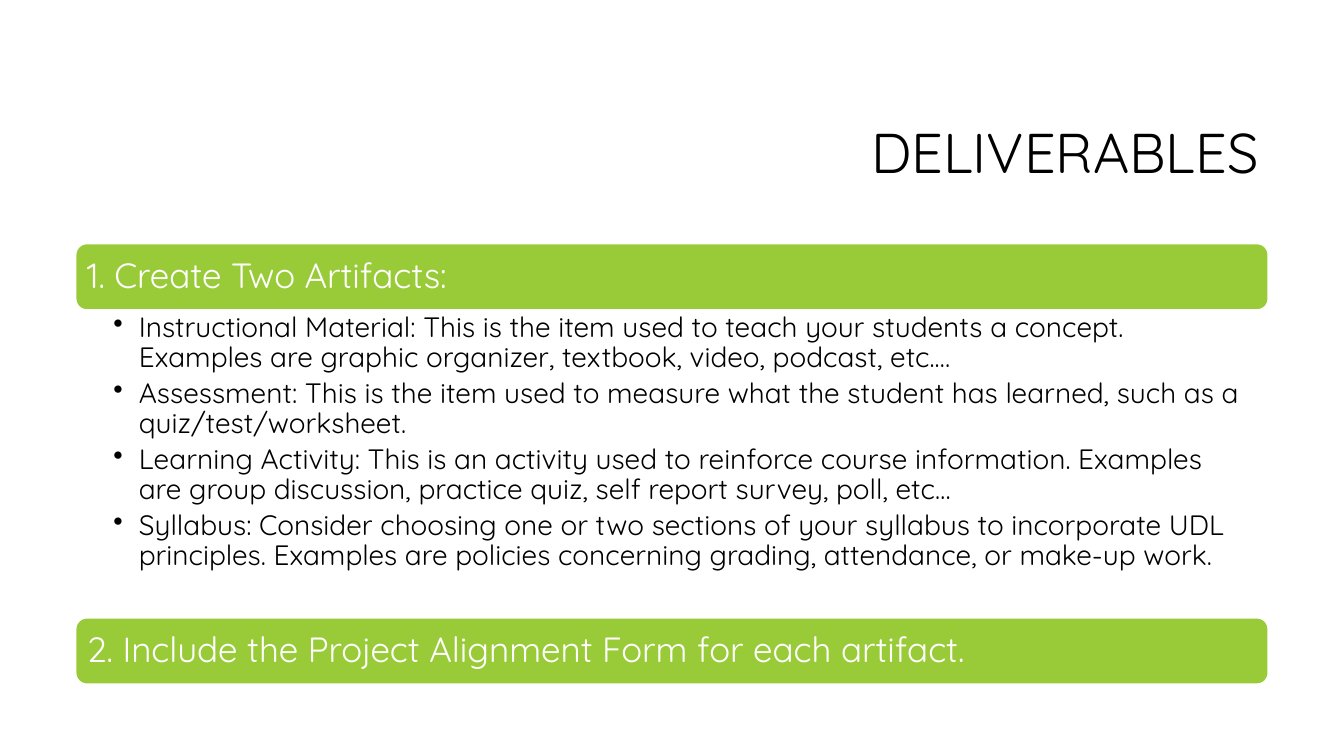
from pptx import Presentation
from pptx.dml.color import RGBColor
from pptx.enum.shapes import MSO_SHAPE
from pptx.enum.text import MSO_ANCHOR, MSO_AUTO_SIZE, PP_ALIGN
from pptx.oxml.ns import qn
from pptx.util import Cm, Pt
from lxml import etree

ROUNDED = MSO_SHAPE.ROUNDED_RECTANGLE
MIDDLE, TOP = MSO_ANCHOR.MIDDLE, MSO_ANCHOR.TOP
LEFT, RIGHT = PP_ALIGN.LEFT, PP_ALIGN.RIGHT
NO_AUTOFIT = MSO_AUTO_SIZE.NONE
FONT = "Quicksand"
BLACK, WHITE, GREEN = "000000", "FFFFFF", "99CB38"
MARGIN, WIDTH, BAR_HEIGHT = 1.91, 30.05, 1.67

BARS = [
    (6.14, "1. Create Two Artifacts:"),
    (15.57, "2. Include the Project Alignment Form for each artifact."),
]
ARTIFACTS = [
    "Instructional Material: This is the item used to teach your students a concept. Examples are graphic organizer, textbook, video, podcast, etc.…",
    "Assessment: This is the item used to measure what the student has learned, such as a quiz/test/worksheet.",
    "Learning Activity: This is an activity used to reinforce course information. Examples are group discussion, practice quiz, self report survey, poll, etc…",
    "Syllabus: Consider choosing one or two sections of your syllabus to incorporate UDL principles. Examples are policies concerning grading, attendance, or make-up work.",
]


def rgb(value):
    return RGBColor.from_string(value)


def write(p, text, size, color, align=LEFT):
    p.alignment = align
    p.line_spacing = 0.9
    p.space_before = Pt(0)
    r = p.add_run()
    r.text = text
    r.font.name = FONT
    r.font.size = Pt(size)
    r.font.color.rgb = rgb(color)


prs = Presentation()
prs.slide_width, prs.slide_height = Cm(33.87), Cm(19.05)
s = prs.slides.add_slide(prs.slide_layouts[5])

title = s.shapes.title
title.left, title.top, title.width, title.height = Cm(8.05), Cm(2.13), Cm(23.93), Cm(3.58)
tf = title.text_frame
tf.word_wrap = True
tf.auto_size = NO_AUTOFIT
tf.vertical_anchor = MIDDLE
write(tf.paragraphs[0], "DELIVERABLES", 40, BLACK, RIGHT)

for top, text in BARS:
    sp = s.shapes.add_shape(ROUNDED, Cm(MARGIN), Cm(top), Cm(WIDTH), Cm(BAR_HEIGHT))
    sp.shadow.inherit = False
    sp.fill.solid()
    sp.fill.fore_color.rgb = rgb(GREEN)
    sp.line.color.rgb = rgb(WHITE)
    sp.line.width = Pt(1)
    tf = sp.text_frame
    tf.word_wrap = True
    tf.vertical_anchor = MIDDLE
    tf.margin_left = tf.margin_right = Cm(0.2)
    tf.margin_top = tf.margin_bottom = Cm(0.1)
    write(tf.paragraphs[0], text, 25, WHITE)

box = s.shapes.add_textbox(Cm(MARGIN), Cm(7.81), Cm(WIDTH), Cm(7.76))
tf = box.text_frame
tf.word_wrap = True
tf.vertical_anchor = TOP
tf.margin_left, tf.margin_right = Cm(0.95), Cm(0.48)
tf.margin_top = tf.margin_bottom = Cm(0.08)
for i, text in enumerate(ARTIFACTS):
    p = tf.add_paragraph() if i else tf.paragraphs[0]
    p.level = 1
    write(p, text, 20, BLACK)
    p.space_after = Pt(4)
    pPr = p._p.get_or_add_pPr()
    pPr.set("marL", str(Cm(0.64)))
    pPr.set("indent", str(-Cm(0.64)))
    etree.SubElement(pPr, qn("a:buChar")).set("char", "•")

prs.save("out.pptx")
